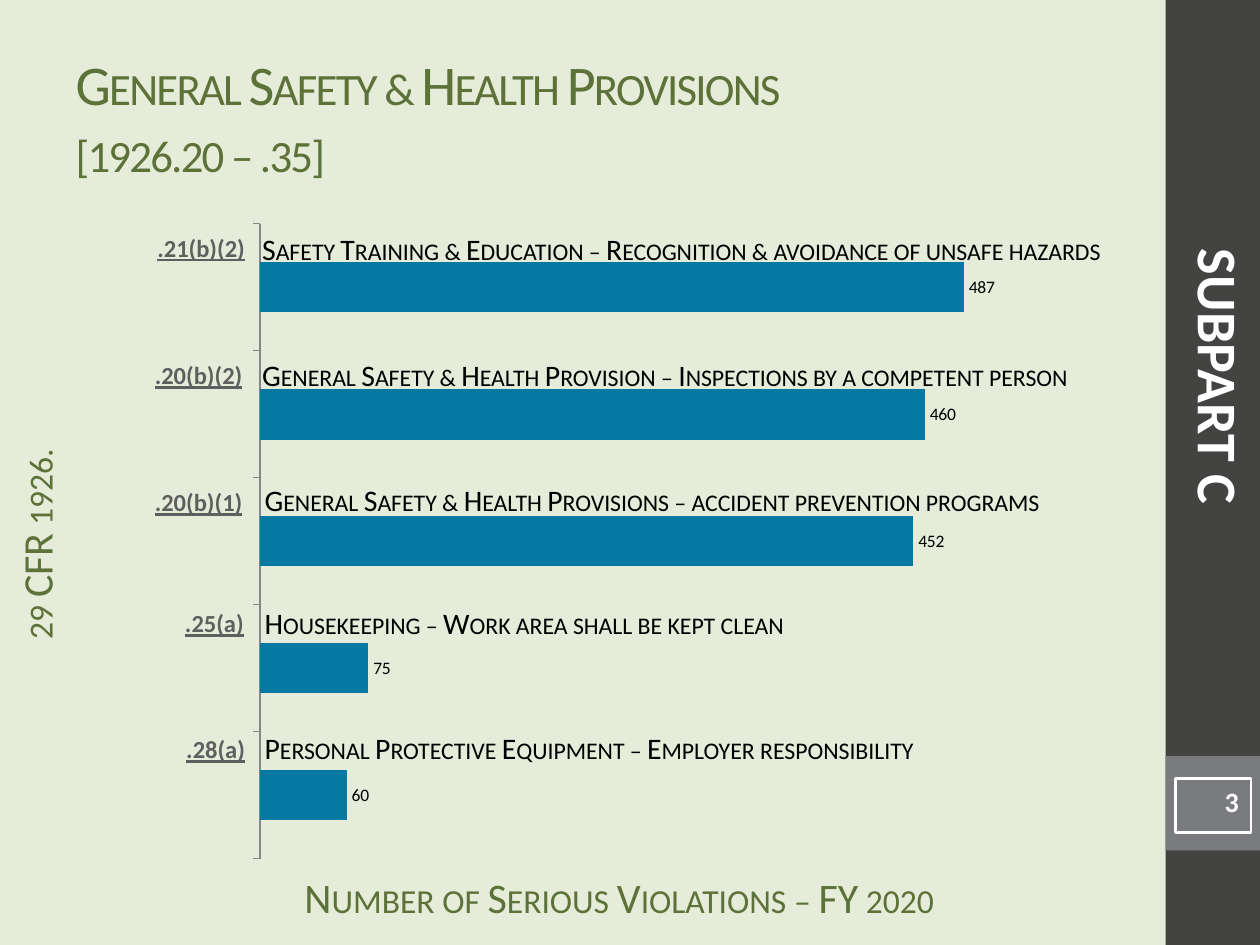
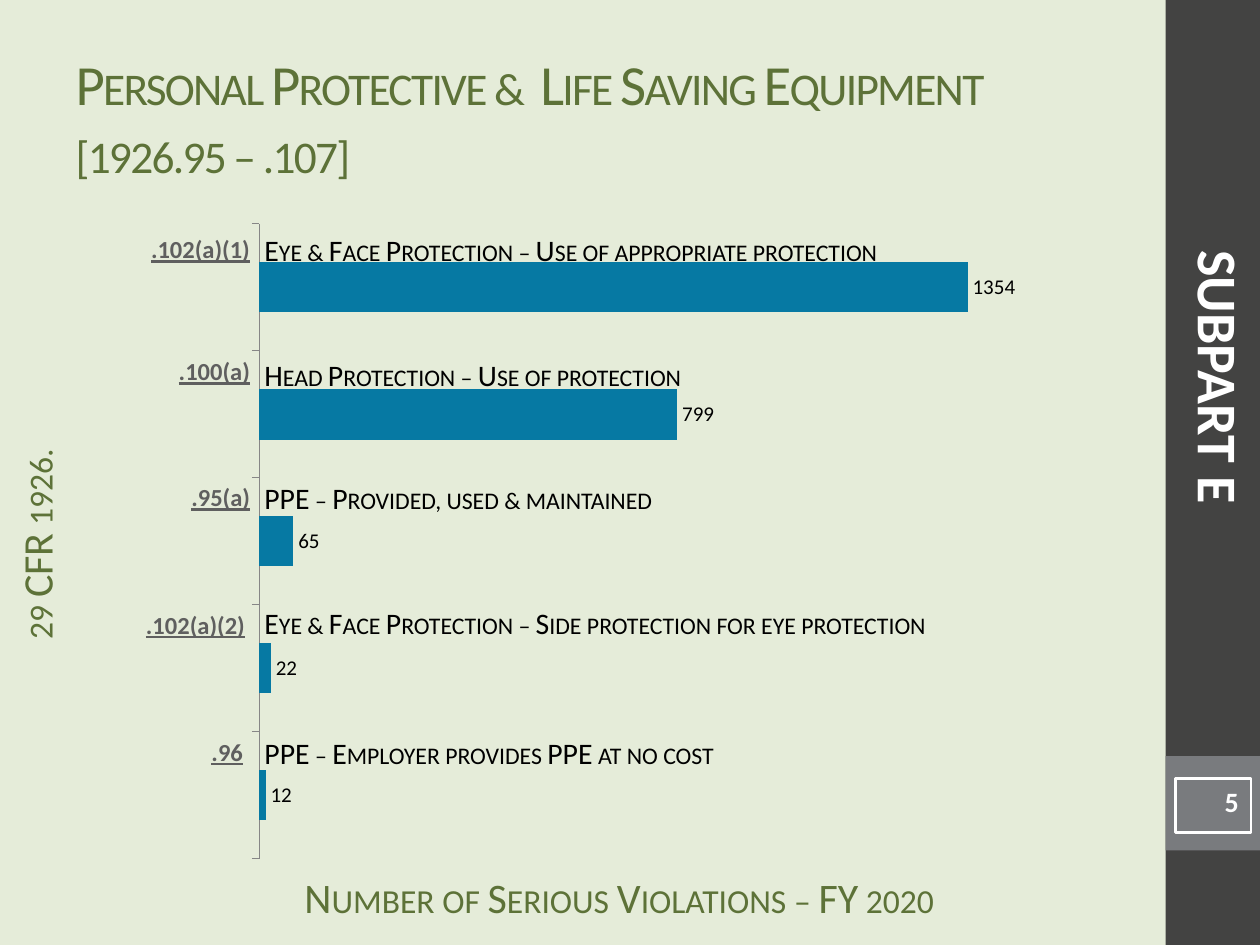
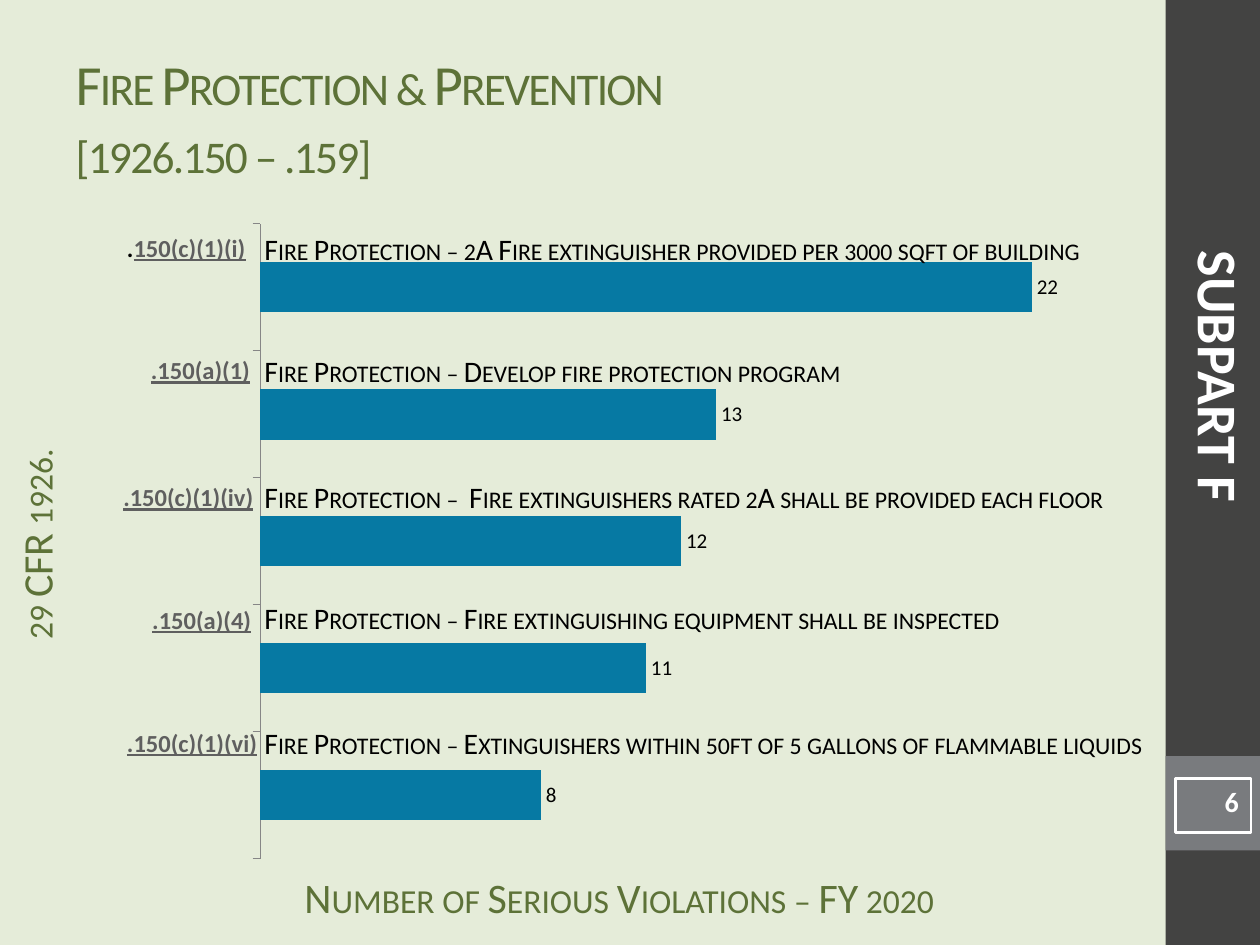
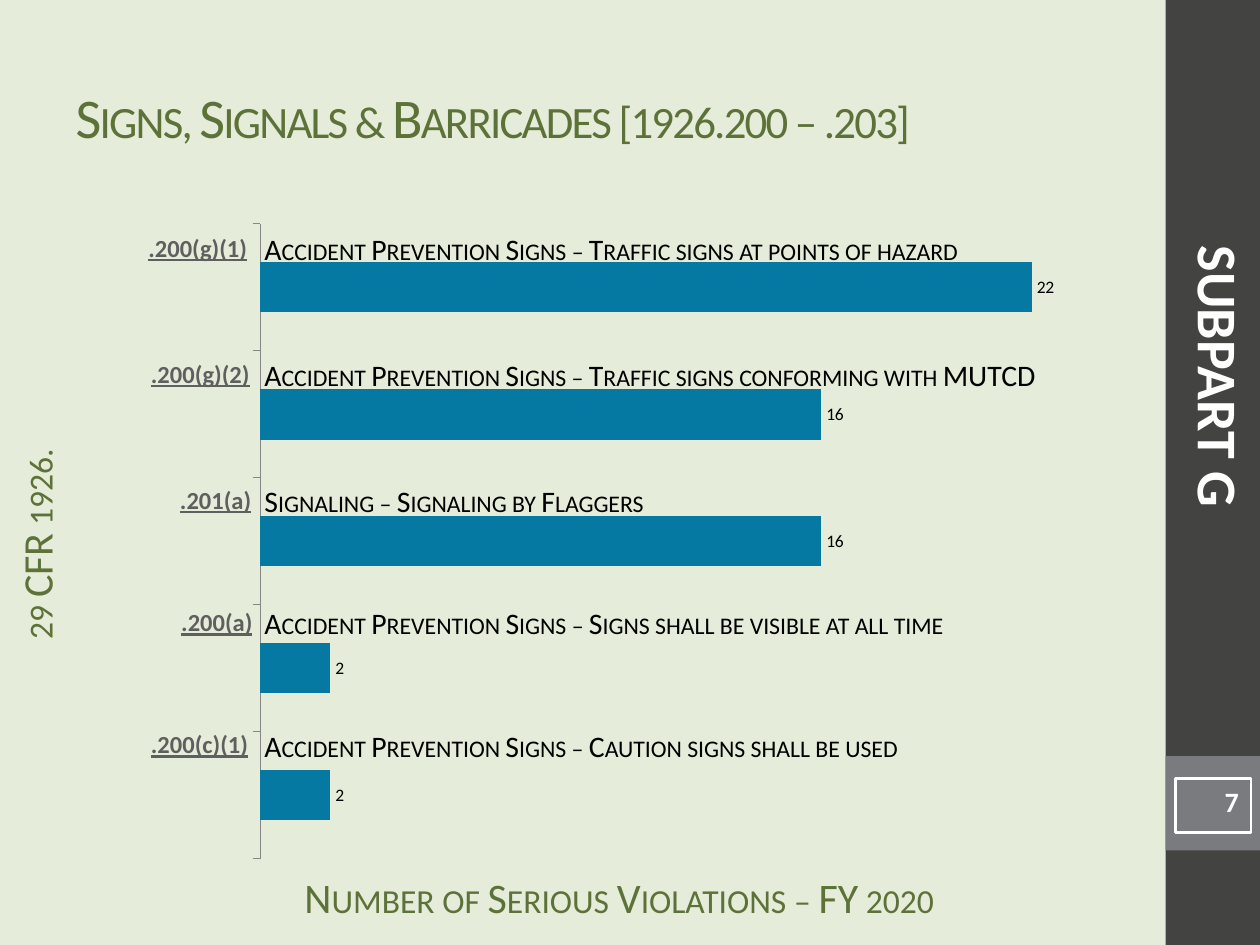
from pptx import Presentation
from pptx import util as u
from pptx.chart import data as chart_data
from pptx.dml import color
from pptx.enum import chart as charts, shapes, text
from pptx.oxml import ns

GREEN, BLACK, WHITE, GREY = "5D7238", "000000", "FFFFFF", "5F5F5F"
CAPTION_SIZE, CODE_SIZE = 17, 14

SUBPARTS = [
    {"letter": "C", "number": "3", "title": "General Safety & Health Provisions\v[1926.20 – .35]",
     "title_size": 32, "chart_width": 7.17, "axis_max": 600, "label_size": 10, "inset": 0,
     "rows": [
         (487, "Safety Training & Education – Recognition & avoidance of unsafe hazards",
          (2.08, 1.83, 6.92, 0.33), ".21(b)(2)", (1.15, 1.8, 1.09)),
         (460, "General Safety & Health Provision – Inspections by a competent person",
          (2.08, 2.83, 6.75, 0.3), ".20(b)(2)", (1.13, 2.81, 1.12)),
         (452, "General Safety & Health Provisions – accident prevention programs",
          (2.1, 3.82, 6.4, 0.33), ".20(b)(1)", (1.13, 3.82, 1.12)),
         (75, "Housekeeping – Work area shall be kept clean",
          (2.1, 4.8, 6.49, 0.29), ".25(a)", (1.37, 4.78, 0.83)),
         (60, "Personal Protective Equipment – Employer responsibility",
          (2.1, 5.79, 5.5, 0.28), ".28(a)", (1.38, 5.78, 0.83)),
     ]},
    {"letter": "E", "number": "5",
     "title": "Personal Protective &  Life Saving Equipment [1926.95 – .107]",
     "title_size": 32.4, "chart_width": 6.92, "axis_max": 1600, "label_size": 12, "inset": 0.1,
     "rows": [
         (1354, "Eye & Face Protection – Use of appropriate protection",
          (2, 1.79, 5.25, 0.39), ".102(a)(1)", (1.1, 1.81, 1.25)),
         (799, "Head Protection – Use of protection",
          (2, 2.78, 3.62, 0.39), ".100(a)", (1.32, 2.78, 0.89)),
         (65, "PPE – Provided, used & maintained",
          (2, 3.76, 3.44, 0.39), ".95(a)", (1.42, 3.78, 0.78)),
         (22, "Eye & Face Protection – Side protection for eye protection",
          (2, 4.75, 5.65, 0.39), ".102(a)(2)", (1.06, 4.79, 1.25)),
         (12, "PPE – Employer provides PPE at no cost",
          (2, 5.78, 3.91, 0.39), ".96", (1.58, 5.8, 0.58)),
     ]},
    {"letter": "F", "number": "6", "title": "Fire Protection & Prevention\v[1926.150 – .159]",
     "title_size": 32.4, "chart_width": 7.25, "axis_max": 25, "label_size": 12, "inset": 0.1,
     "rows": [
         (22, "Fire Protection – 2A Fire extinguisher provided per 3000 sqft of building",
          (2, 1.78, 7.11, 0.39), "150(c)(1)(i)", (0.91, 1.8, 1.36)),
         (13, "Fire Protection – Develop fire protection program",
          (2, 2.75, 4.91, 0.39), ".150(a)(1)", (1.1, 2.77, 1.2)),
         (12, "Fire Protection –  Fire extinguishers rated 2A shall be provided each floor",
          (2, 3.75, 7.12, 0.39), ".150(c)(1)(iv)", (0.88, 3.78, 1.49)),
         (11, "Fire Protection – Fire extinguishing equipment shall be inspected",
          (2, 4.71, 6.21, 0.39), ".150(a)(4)", (1.11, 4.75, 1.25)),
         (8, "Fire Protection – Extinguishers within 50ft of 5 gallons of flammable liquids",
          (2, 5.7, 7.47, 0.39), ".150(c)(1)(vi)", (0.91, 5.73, 1.54)),
     ]},
    {"letter": "G", "number": "7", "title": "Signs, Signals & Barricades [1926.200 – .203]",
     "title_size": 32, "chart_width": 7.25, "axis_max": 25, "label_size": 10, "inset": 0.1,
     "rows": [
         (22, "Accident Prevention Signs – Traffic signs at points of hazard",
          (2, 1.78, 5.98, 0.39), ".200(g)(1)", (1.08, 1.8, 1.17)),
         (16, "Accident Prevention Signs – Traffic signs conforming with MUTCD",
          (2, 2.78, 6.5, 0.39), ".200(g)(2)", (1.1, 2.8, 1.2)),
         (16, "Signaling – Signaling by Flaggers",
          (2, 3.78, 3.31, 0.39), ".201(a)", (1.33, 3.8, 0.92)),
         (2, "Accident Prevention Signs – Signs shall be visible at all time",
          (2, 4.75, 5.78, 0.39), ".200(a)", (1.34, 4.77, 0.96)),
         (2, "Accident Prevention Signs – Caution signs shall be used",
          (2, 5.73, 5.4, 0.39), ".200(c)(1)", (1.1, 5.74, 1.17)),
     ]},
]


def paint(hex_code):
    return color.RGBColor.from_string(hex_code)


def write(frame, words, size, ink, align="LEFT", run_xml=None, **font):
    paragraph = frame.paragraphs[0]
    paragraph.alignment = getattr(text.PP_ALIGN, align)
    for index, line in enumerate(words.split("\v")):
        if index:
            paragraph.add_line_break()
        run = paragraph.add_run()
        run.text = line
        run.font.color.rgb = paint(ink)
        for key, value in {"name": "Calibri", "size": u.Pt(size), **font}.items():
            setattr(run.font, key, value)
        for key, value in (run_xml or {}).items():
            run.font.element.set(key, value) if hasattr(run.font, "element") else \
                frame.paragraphs[0].runs[-1].font._element.set(key, value)


SMALL_CAPS = {"cap": "small"}
TITLE_CAPS = {"cap": "small", "spc": "-100"}

deck = Presentation()
deck.slide_width, deck.slide_height = u.Inches(10), u.Inches(7.5)
layout = deck.slide_layouts[5]
layout.background.fill.solid()
layout.background.fill.fore_color.rgb = paint("E5ECD9")
for spare in list(layout.placeholders)[1:]:
    layout.shapes.element.remove(spare.element)
layout_title = layout.placeholders[0]
for key, value in {"left": 0.5, "top": 0.3, "width": 8.33, "height": 1.25}.items():
    setattr(layout_title, key, u.Inches(value))
title_style = deck.slide_master.element.find(".//" + ns.qn("p:titleStyle"))
title_style.find(".//" + ns.qn("a:defRPr")).set("sz", "3200")

pages = [deck.slides.add_slide(layout) for _ in SUBPARTS]

for top, height, shade in [(0, 7.5, "434342"), (6, 0.75, "797B7E")]:
    band = pages[0].shapes.add_shape(
        shapes.MSO_SHAPE.RECTANGLE, *map(u.Inches, (9.25, top, 0.75, height)))
    band.shadow.inherit = False
    band.fill.solid()
    band.fill.fore_color.rgb = paint(shade)
    band.line.fill.background()
    layout.shapes.element.append(band.element)
    layout_title = layout.placeholders[0]

axis_notes = []
for words, place, turn in [
    ("Number of Serious Violations – FY 2020", (2.08, 6.92, 5.67, 0.33), 0),
    ("29 CFR 1926.", (-1.72, 4.03, 4.19, 0.58), 270),
]:
    note = pages[0].shapes.add_textbox(*map(u.Inches, place))
    note.rotation = turn
    for key, value in {"word_wrap": True, "margin_top": 0, "margin_bottom": u.Inches(0.05)}.items():
        setattr(note.text_frame, key, value)
    write(note.text_frame, words, 24, GREEN, "CENTER", SMALL_CAPS)
    axis_notes.append(note)
for note in axis_notes:
    layout.shapes.element.append(note.element)
for identity, part in enumerate(layout.shapes.element.iter(ns.qn("p:cNvPr")), 1):
    part.set("id", str(identity))

for page, subpart in zip(pages, SUBPARTS):
    violations = chart_data.CategoryChartData()
    violations.categories = ["1", "2", "3", "4", "5"]
    violations.add_series("Series 1", [row[0] for row in reversed(subpart["rows"])])
    chart = page.shapes.add_chart(
        charts.XL_CHART_TYPE.BAR_CLUSTERED,
        *map(u.Inches, (1.92, 1.67, subpart["chart_width"], 5.25)), violations).chart
    chart.has_legend = chart.has_title = False
    chart.font.name, chart.font.size = "Calibri", u.Pt(10)
    chart.font.color.rgb = paint(BLACK)
    for key, value in {"visible": False, "has_major_gridlines": False,
                       "minimum_scale": 0, "maximum_scale": subpart["axis_max"]}.items():
        setattr(chart.value_axis, key, value)
    for key, value in {"tick_label_position": charts.XL_TICK_LABEL_POSITION.NONE,
                       "major_tick_mark": charts.XL_TICK_MARK.OUTSIDE,
                       "minor_tick_mark": charts.XL_TICK_MARK.NONE,
                       "has_major_gridlines": False}.items():
        setattr(chart.category_axis, key, value)
    chart.category_axis.tick_labels.font.size = u.Pt(12)
    chart.category_axis.format.line.color.rgb = paint("868686")
    plot = chart.plots[0]
    plot.gap_width, plot.vary_by_categories = 150, False
    bars = plot.series[0]
    bars.format.fill.solid()
    bars.format.fill.fore_color.rgb = paint("0679A3")
    labels = bars.data_labels
    labels.show_value, labels.position = True, charts.XL_LABEL_POSITION.OUTSIDE_END
    labels.font.name, labels.font.size = "Calibri", u.Pt(subpart["label_size"])
    labels.font.color.rgb = paint(BLACK)

    heading = page.shapes.title
    page.shapes.element.append(heading.element)
    heading.text_frame.auto_size = text.MSO_AUTO_SIZE.NONE
    heading.text_frame.vertical_anchor = text.MSO_ANCHOR.MIDDLE
    write(heading.text_frame, subpart["title"], subpart["title_size"], GREEN, "LEFT", TITLE_CAPS)

    number = page.shapes.add_shape(
        shapes.MSO_SHAPE.RECTANGLE, *map(u.Inches, (9.33, 6.18, 0.6, 0.43)))
    number.shadow.inherit = False
    number.fill.background()
    number.line.color.rgb, number.line.width = paint(WHITE), u.Pt(1.5)
    number.text_frame.vertical_anchor = text.MSO_ANCHOR.TOP
    write(number.text_frame, subpart["number"], 16, WHITE, "RIGHT", bold=True)

    side_name = page.shapes.add_textbox(*map(u.Inches, (6.69, 2.67, 5.98, 0.64)))
    side_name.rotation = 90
    side_name.text_frame.word_wrap = True
    side_name.text_frame.auto_size = text.MSO_AUTO_SIZE.SHAPE_TO_FIT_TEXT
    write(side_name.text_frame, "SUBPART " + subpart["letter"], 32, WHITE, "CENTER", bold=True)

    inset = subpart["inset"]
    fit = text.MSO_AUTO_SIZE.SHAPE_TO_FIT_TEXT if inset else text.MSO_AUTO_SIZE.NONE
    caption_format = {"word_wrap": not inset, "auto_size": fit,
                      "margin_left": u.Inches(inset), "margin_right": u.Inches(inset),
                      "margin_top": u.Inches(inset / 2), "margin_bottom": u.Inches(inset / 2)}
    for _, caption, caption_place, code, code_place in subpart["rows"]:
        caption_frame = page.shapes.add_textbox(*map(u.Inches, caption_place)).text_frame
        for key, value in caption_format.items():
            setattr(caption_frame, key, value)
        write(caption_frame, caption, CAPTION_SIZE, BLACK, "LEFT", SMALL_CAPS)

        code_frame = page.shapes.add_textbox(*map(u.Inches, (*code_place, 0.34))).text_frame
        code_frame.word_wrap = True
        code_frame.auto_size = text.MSO_AUTO_SIZE.SHAPE_TO_FIT_TEXT
        if not code.startswith("."):
            write(code_frame, ".", CODE_SIZE, BLACK, bold=True)
        write(code_frame, code, CODE_SIZE, GREY, bold=True, underline=True)

deck.save("out.pptx")
